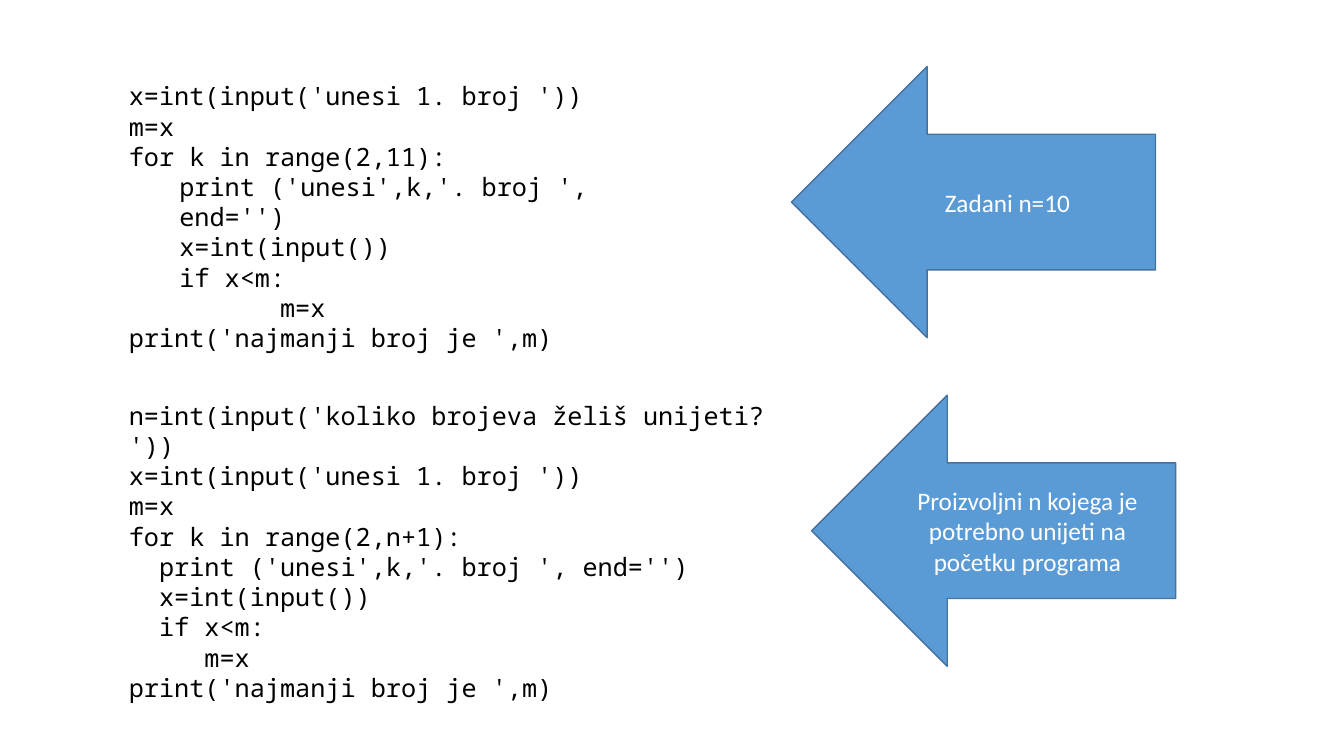
from pptx import Presentation
from pptx import util as u
from pptx.dml.color import RGBColor
from pptx.enum import shapes, text

BLACK = RGBColor(0x00, 0x00, 0x00)
WHITE = RGBColor(0xFF, 0xFF, 0xFF)
BLUE = RGBColor(0x5B, 0x9B, 0xD5)
DARK_BLUE = RGBColor(0x43, 0x73, 0x9E)

# Each code line is (indent in inches, wording)
FIXED_COUNT = [
    (0, "x=int(input('unesi 1. broj '))"),
    (0, "m=x"),
    (0, "for k in range(2,11):"),
    (0.5, "print ('unesi',k,'. broj ', end='')"),
    (0.5, "x=int(input())"),
    (0.5, "if x<m:"),
    (1.5, "m=x"),
    (0, "print('najmanji broj je ',m)"),
]
CHOSEN_COUNT = [
    (0, "n=int(input('koliko brojeva želiš unijeti? '))"),
    (0, "x=int(input('unesi 1. broj '))"),
    (0, "m=x"),
    (0, "for k in range(2,n+1):"),
    (0.3, "print ('unesi',k,'. broj ', end='')"),
    (0.3, "x=int(input())"),
    (0.3, "if x<m:"),
    (0.75, "m=x"),
    (0, "print('najmanji broj je ',m)"),
]


def write(para, wording, font, color, size=18, indent=0, align=None):
    """Fill one paragraph with formatted text."""
    span = para.add_run()
    span.text = wording
    span.font.name = font
    span.font.size = u.Pt(size)
    span.font.color.rgb = color
    para.alignment = align
    if indent:
        para._p.get_or_add_pPr().set("marL", str(u.Inches(indent)))


class Page:
    """The current slide, measured on a grid of 100 columns by 100 rows."""

    code_font = "Noto Sans Mono"
    label_font = "Calibri"

    def __init__(self, deck):
        self.column = deck.slide_width / 100
        self.row = deck.slide_height / 100
        self.shapes = deck.slides.add_slide(deck.slide_layouts[6]).shapes

    def place(self, left, top, width, height):
        return (round(left * self.column), round(top * self.row),
                round(width * self.column), round(height * self.row))

    def code(self, lines, *area):
        frame = self.shapes.add_textbox(*self.place(*area)).text_frame
        frame.word_wrap = True
        for number, (indent, wording) in enumerate(lines):
            para = frame.add_paragraph() if number else frame.paragraphs[0]
            write(para, wording, self.code_font, BLACK, indent=indent)

    def arrow(self, label, *area):
        arrow = self.shapes.add_shape(
            shapes.MSO_SHAPE.LEFT_ARROW, *self.place(*area))
        arrow.shadow.inherit = False
        arrow.fill.solid()
        arrow.fill.fore_color.rgb = BLUE
        arrow.line.color.rgb = DARK_BLUE
        arrow.line.width = u.Pt(1)
        frame = arrow.text_frame
        frame.word_wrap = True
        frame.vertical_anchor = text.MSO_ANCHOR.MIDDLE
        write(frame.paragraphs[0], label, self.label_font, WHITE,
              align=text.PP_ALIGN.CENTER)


def main():
    deck = Presentation()
    deck.slide_width, deck.slide_height = u.Inches(13.33), u.Inches(7.5)
    page = Page(deck)

    # Programs on the left
    page.code(FIXED_COUNT, 8.85, 10, 44.04, 33.6)
    page.code(CHOSEN_COUNT, 8.85, 52.27, 50.04, 37.73)

    # Arrows pointing at them
    page.arrow("Zadani n=10", 58.89, 8.8, 27.08, 35.87)
    page.arrow("Proizvoljni n kojega je potrebno unijeti na početku programa",
               60.39, 52.27, 27.08, 35.87)

    deck.save("out.pptx")


if __name__ == "__main__":
    main()
